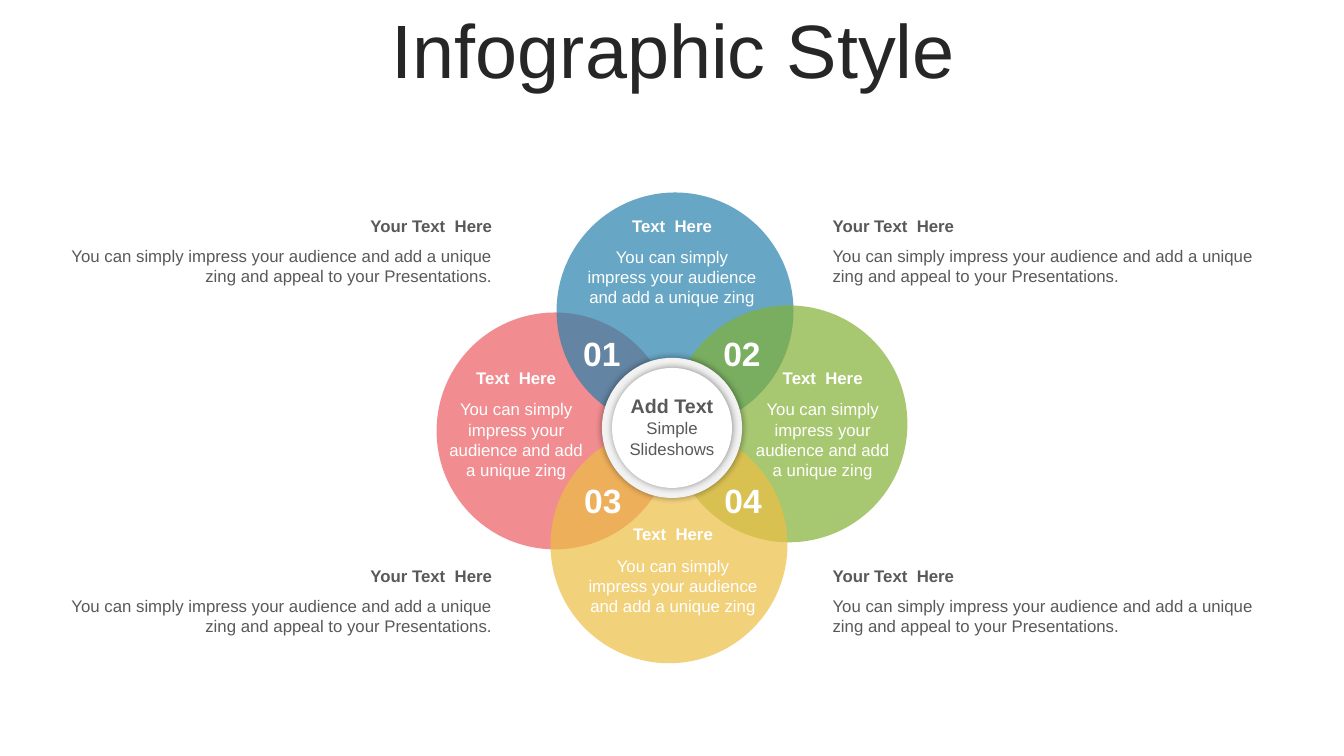
from lxml import etree
from pptx import Presentation
from pptx import util as u
from pptx.dml.color import RGBColor
from pptx.enum import shapes, text
from pptx.oxml import ns

WIDTH, HEIGHT = 13.33, 7.5
FONT = "Arial"
WHITE, GREY = "FFFFFF", "595959"
LEFT, CENTER, RIGHT = text.PP_ALIGN.LEFT, text.PP_ALIGN.CENTER, text.PP_ALIGN.RIGHT
TOP, MIDDLE = text.MSO_ANCHOR.TOP, text.MSO_ANCHOR.MIDDLE

PITCH = "You can simply impress your audience and add a unique zing"
PETAL = 2.35
# Colour, petal offset, caption offset and caption width, within the flower
PETALS = [
    ("EC5D62", (0, 1.19), (-0.02, 1.69), 1.62),
    ("2781AB", (1.19, 0), (1.39, 0.18), 1.89),
    ("82B135", (2.32, 1.12), (3.02, 1.69), 1.62),
    ("EDBE44", (1.13, 2.32), (1.40, 3.24), 1.89),
]


def color(value):
    return RGBColor.from_string(value)


def add_effect(shape, parent, tag, **attributes):
    return etree.SubElement(parent, ns.qn(tag), attributes)


def add_circle(slide, left, top, size, fill, opacity=None, shadow=False):
    shape = slide.shapes.add_shape(shapes.MSO_SHAPE.OVAL, u.Inches(left), u.Inches(top),
                                   u.Inches(size), u.Inches(size))
    shape.shadow.inherit = False
    shape.fill.solid()
    shape.fill.fore_color.rgb = color(fill)
    shape.line.fill.background()
    properties = shape.element.spPr
    if opacity:
        tint = properties.find(".//" + ns.qn("a:srgbClr"))
        etree.SubElement(tint, ns.qn("a:alpha"), val=str(opacity * 1000))
    if shadow:
        effects = properties.find(ns.qn("a:effectLst"))
        outer = etree.SubElement(effects, ns.qn("a:outerShdw"), blurRad=str(u.Pt(5)),
                                 dist="0", dir="0", algn="ctr", rotWithShape="0")
        tint = etree.SubElement(outer, ns.qn("a:srgbClr"), val="000000")
        etree.SubElement(tint, ns.qn("a:alpha"), val="40000")


def add_label(slide, box, content, size=12, fill=GREY, bold=False, align=CENTER,
              anchor=TOP, spacing=None):
    shape = slide.shapes.add_textbox(*(u.Inches(length) for length in box))
    frame = shape.text_frame
    frame.word_wrap = True
    frame.vertical_anchor = anchor
    paragraph = frame.paragraphs[0]
    paragraph.alignment = align
    paragraph.line_spacing = spacing
    run = paragraph.add_run()
    run.text = content
    run.font.name = FONT
    run.font.size = u.Pt(size)
    run.font.bold = bold
    run.font.color.rgb = color(fill)


def add_caption(slide, left, top, width, heading, body, body_height, gap=0.3, **style):
    add_label(slide, (left, top, width, 0.3), heading, bold=True, **style)
    add_label(slide, (left, top + gap, width, body_height), body, **style)


def add_title(slide, left, top, width, height):
    add_label(slide, (left, top, width, height), "Infographic Style", size=54,
              fill="262626", anchor=MIDDLE, spacing=0.9)


def add_hub(slide, left, top, size):
    rim = 0.1
    add_circle(slide, left, top, size, "F2F2F2", shadow=True)
    add_circle(slide, left + rim, top + rim, size - 2 * rim, WHITE, shadow=True)
    text_left, text_width = left + 0.12, size - 0.24
    add_label(slide, (text_left, top + 0.31, text_width, 0.34), "Add Text", size=14, bold=True)
    add_label(slide, (text_left, top + 0.55, text_width, 0.5), "Simple Slideshows")


def add_flower(slide, left, top):
    # Overlapping petals below the hub
    for fill, (x, y), _, _ in PETALS:
        add_circle(slide, left + x, top + y, PETAL, fill, opacity=70)
    add_hub(slide, left + 1.64, top + 1.64, 1.39)
    # Numbers where two petals overlap
    for index in range(4):
        row, column = divmod(index, 2)
        box = (left + 1.31 + 1.39 * column + 0.01 * row, top + 1.34 + 1.46 * row, 0.66, 0.5)
        add_label(slide, box, f"{index + 1:02d}", size=24, fill=WHITE, bold=True, anchor=MIDDLE)
    # Petal captions
    for _, _, (x, y), width in PETALS:
        add_caption(slide, left + x, top + y, width, "Text  Here", PITCH,
                    0.71 if width > 1.7 else 0.91, gap=0.31, fill=WHITE)


def add_corner_notes(slide, left, top, column_step, row_step):
    for column, align in enumerate((RIGHT, LEFT)):
        for row in range(2):
            add_caption(slide, left + column * column_step, top + row * row_step, 4.53,
                        "Your Text  Here", PITCH + " and appeal to your Presentations.",
                        0.5, align=align)


def main():
    presentation = Presentation()
    presentation.slide_width = u.Inches(WIDTH)
    presentation.slide_height = u.Inches(HEIGHT)
    slide = presentation.slides.add_slide(presentation.slide_layouts[6])
    add_title(slide, 0.35, 0.14, 12.66, 0.79)
    add_flower(slide, 4.33, 1.91)
    add_corner_notes(slide, 0.45, 2.09, 7.71, 3.47)
    presentation.save("out.pptx")


if __name__ == "__main__":
    main()
